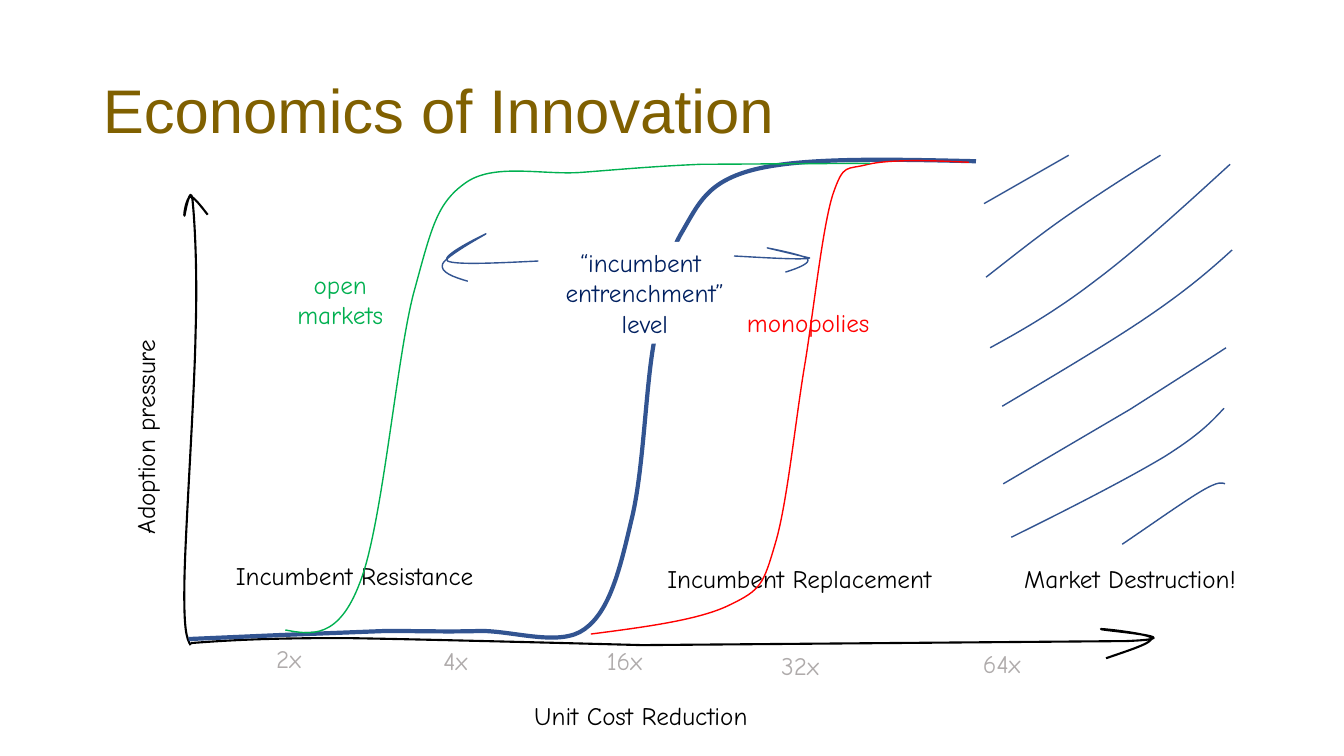
"""Builds the Economics of Innovation slide: adoption curves against unit cost reduction."""
import lxml.etree
import pptx
import pptx.dml.color
import pptx.enum.shapes
import pptx.enum.text
import pptx.oxml.ns
import pptx.util

Inches, Pt = pptx.util.Inches, pptx.util.Pt
ALIGN = pptx.enum.text.PP_ALIGN
qn = pptx.oxml.ns.qn
STEPS = 16
THEME = {
    "title_font": "Arial", "hand_font": "Comic Neue", "title_size": 44, "label_size": 18,
    "title": "806000", "ink": "000000", "tick": "AFABAB", "curve": "325491",
    "level": "002060", "monopoly": "FF0000", "open": "00B050", "paper": "FFFFFF",
    "thin": 1, "axis": 1.5, "thick": 3,
}


def draw_stroke(start, segments, color, width):
    """Draw an open stroke; a segment is a line end (2 numbers) or a cubic curve (6 numbers)."""
    extent, pen = [start], start
    for segment in segments:
        if len(segment) == 6:
            for step in range(1, STEPS):
                t = step / STEPS
                weights = (1 - t) ** 3, 3 * t * (1 - t) ** 2, 3 * t * t * (1 - t), t ** 3
                extent.append([sum(w * v for w, v in zip(weights, (pen[i], *segment[i::2])))
                               for i in (0, 1)])
        pen = segment[-2:]
        extent.append(pen)
    left, top = (Inches(min(values)) for values in zip(*extent))
    right, bottom = (Inches(max(values)) for values in zip(*extent))

    builder = slide.shapes.build_freeform(left, top)
    builder.add_line_segments([(right, bottom)], close=False)
    stroke = builder.convert_to_shape()
    outline = next(stroke._element.iter(qn("a:path")))
    for child in list(outline):
        outline.remove(child)
    for tag, numbers in [("a:moveTo", start)] + [
            ("a:lnTo" if len(segment) == 2 else "a:cubicBezTo", segment) for segment in segments]:
        command = lxml.etree.SubElement(outline, qn(tag))
        for x, y in zip(numbers[::2], numbers[1::2]):
            lxml.etree.SubElement(command, qn("a:pt"), x=str(Inches(x) - left), y=str(Inches(y) - top))
    stroke.shadow.inherit = False
    stroke.fill.background()
    stroke.line.color.rgb = pptx.dml.color.RGBColor.from_string(THEME[color])
    stroke.line.width = Pt(THEME[width])


def write_label(label, lines, color, align=ALIGN.LEFT):
    """Write hand-lettered lines into a shape that does not wrap."""
    frame = label.text_frame
    frame.word_wrap = False
    frame.auto_size = pptx.enum.text.MSO_AUTO_SIZE.SHAPE_TO_FIT_TEXT
    frame.text = "\n".join(lines)
    for paragraph in frame.paragraphs:
        paragraph.alignment = align
        paragraph.font.name = THEME["hand_font"]
        paragraph.font.size = Pt(THEME["label_size"])
        paragraph.font.color.rgb = pptx.dml.color.RGBColor.from_string(THEME[color])


deck = pptx.Presentation()
deck.slide_width, deck.slide_height = Inches(13.33), Inches(7.5)
slide = deck.slides.add_slide(deck.slide_layouts[5])

title = slide.shapes.title
title.left, title.top, title.width, title.height = map(Inches, (0.92, 0.4, 11.5, 1.45))
title.text_frame.text = "Economics of Innovation"
title.text_frame.vertical_anchor = pptx.enum.text.MSO_ANCHOR.MIDDLE
heading = title.text_frame.paragraphs[0]
heading.alignment = ALIGN.LEFT
heading.line_spacing = 0.9
heading.font.name = THEME["title_font"]
heading.font.size = Pt(THEME["title_size"])
heading.font.color.rgb = pptx.dml.color.RGBColor.from_string(THEME["title"])

cost_axis = [
    (2.28, 6.35, 2.66, 6.33, 3.41, 6.33), (4.15, 6.34, 6.37, 6.4, 6.37, 6.4), (11.17, 6.36),
    (11.92, 6.33, 10.88, 6.25, 10.92, 6.24), (10.97, 6.24, 11.41, 6.29, 11.42, 6.33),
    (11.43, 6.38, 11.2, 6.45, 10.97, 6.53),
]
pressure_axis = [
    (1.85, 6.33, 1.82, 6.25, 1.83, 5.74), (1.84, 5.22, 1.93, 3.92, 1.94, 3.3),
    (1.96, 2.67, 1.93, 2.18, 1.91, 1.99), (1.89, 1.8, 1.83, 2.14, 1.83, 2.14),
    (1.82, 2.13, 1.85, 1.96, 1.89, 1.95), (1.92, 1.95, 1.99, 2.04, 2.06, 2.13),
]
incumbent_curve = [
    (2.79, 6.3), (3.83, 6.26), (4.16, 6.26, 4.44, 6.27, 4.77, 6.26),
    (5.1, 6.26, 5.56, 6.42, 5.8, 6.24), (6.05, 6.06, 6.15, 5.64, 6.26, 5.17),
    (6.38, 4.7, 6.4, 3.9, 6.48, 3.43), (6.57, 2.95, 6.59, 2.6, 6.76, 2.31),
    (6.93, 2.02, 7.01, 1.8, 7.49, 1.68), (7.98, 1.56, 8.83, 1.58, 9.68, 1.6),
]
draw_stroke((1.89, 6.38), cost_axis, "ink", "axis")
draw_stroke((1.89, 6.4), pressure_axis, "ink", "axis")
draw_stroke((1.87, 6.34), incumbent_curve, "curve", "thick")

destruction_hatching = [
    ((9.76, 2.02), [(10.6, 1.54)]),
    ((9.78, 2.75), [(10.05, 2.54, 10.31, 2.33, 10.6, 2.13), (10.89, 1.93, 11.2, 1.73, 11.51, 1.54)]),
    ((9.82, 3.45), [(10.15, 3.27, 10.48, 3.08, 10.87, 2.78), (11.27, 2.48, 11.73, 2.06, 12.2, 1.63)]),
    ((9.94, 4.03), [(10.48, 3.71, 11.02, 3.39, 11.4, 3.13), (11.78, 2.87, 12, 2.68, 12.22, 2.48)]),
    ((9.95, 4.8), [(11.21, 4.06), (11.57, 3.83, 11.87, 3.64, 12.16, 3.45)]),
    ((10.03, 5.33), [(10.62, 5.04, 11.2, 4.74, 11.55, 4.53), (11.9, 4.31, 12.02, 4.18, 12.14, 4.05)]),
    ((11.13, 5.4), [(11.44, 5.19, 11.75, 4.97, 11.92, 4.87), (12.09, 4.77, 12.12, 4.79, 12.15, 4.8)]),
]
for start, segments in destruction_hatching:
    draw_stroke(start, segments, "curve", "thin")

level = slide.shapes.add_shape(
    pptx.enum.shapes.MSO_SHAPE.RECTANGLE, Inches(5.37), Inches(2.4), Inches(2.05), Inches(1.01))
level.shadow.inherit = False
level.fill.solid()
level.fill.fore_color.rgb = pptx.dml.color.RGBColor.from_string(THEME["paper"])
level.line.fill.background()
write_label(level, ["“incumbent ", "entrenchment”", "level"], "level", ALIGN.CENTER)

labels = [
    (["Unit Cost Reduction"], 5.2, 6.9, 2.94, 0.4, "ink", ALIGN.LEFT, 0),
    (["Adoption pressure"], 0.2, 3.96, 2.48, 0.4, "ink", ALIGN.LEFT, 270),
    (["2x"], 2.64, 6.33, 0.59, 0.4, "tick", ALIGN.LEFT, 0),
    (["4x"], 4.3, 6.35, 0.55, 0.4, "tick", ALIGN.LEFT, 0),
    (["16x"], 5.92, 6.35, 0.67, 0.4, "tick", ALIGN.LEFT, 0),
    (["32x"], 7.65, 6.4, 0.76, 0.4, "tick", ALIGN.LEFT, 0),
    (["64x"], 9.65, 6.38, 0.72, 0.4, "tick", ALIGN.LEFT, 0),
    (["Incumbent Resistance"], 2.24, 5.51, 3.01, 0.4, "ink", ALIGN.LEFT, 0),
    (["Incumbent Replacement"], 6.52, 5.54, 3.23, 0.4, "ink", ALIGN.LEFT, 0),
    (["Market Destruction!"], 10.06, 5.54, 2.77, 0.4, "ink", ALIGN.LEFT, 0),
    (["monopolies"], 7.31, 3, 1.54, 0.4, "monopoly", ALIGN.LEFT, 0),
    (["open", "markets"], 2.75, 2.62, 1.25, 0.71, "open", ALIGN.CENTER, 0),
]
for lines, left, top, width, height, color, align, rotation in labels:
    label = slide.shapes.add_textbox(Inches(left), Inches(top), Inches(width), Inches(height))
    label.rotation = rotation
    write_label(label, lines, color, align)

monopoly_curve = [
    (9.22, 1.59, 8.83, 1.58, 8.61, 1.63), (8.39, 1.69, 8.37, 1.61, 8.26, 1.93),
    (8.16, 2.25, 8.08, 3, 7.99, 3.57), (7.89, 4.15, 7.81, 4.99, 7.69, 5.39),
    (7.57, 5.8, 7.55, 5.85, 7.24, 6), (6.94, 6.15, 6.4, 6.22, 5.86, 6.29),
]
open_curve = [
    (6.95, 1.63), (6.48, 1.65, 6.16, 1.68, 5.77, 1.71),
    (5.38, 1.74, 4.89, 1.61, 4.61, 1.82), (4.33, 2.02, 4.28, 2.26, 4.1, 2.92),
    (3.93, 3.58, 3.79, 5.23, 3.57, 5.78), (3.36, 6.34, 3.09, 6.3, 2.83, 6.25),
]
arrow_to_monopolies = [
    (7.63, 2.56, 7.98, 2.58, 8.03, 2.56), (7.61, 2.46),
    (7.61, 2.46, 7.98, 2.53, 8.01, 2.57), (8.04, 2.61, 7.92, 2.66, 7.79, 2.7),
]
arrow_to_open = [
    (4.93, 2.61, 4.52, 2.63, 4.44, 2.59), (4.35, 2.54, 4.82, 2.32, 4.82, 2.32),
    (4.81, 2.33, 4.42, 2.54, 4.39, 2.62), (4.36, 2.7, 4.5, 2.75, 4.64, 2.79),
]
draw_stroke((9.61, 1.61), monopoly_curve, "monopoly", "thin")
draw_stroke((8.63, 1.62), open_curve, "open", "thin")
draw_stroke((7.28, 2.54), arrow_to_monopolies, "curve", "thin")
draw_stroke((5.34, 2.59), arrow_to_open, "curve", "thin")

deck.save("out.pptx")
